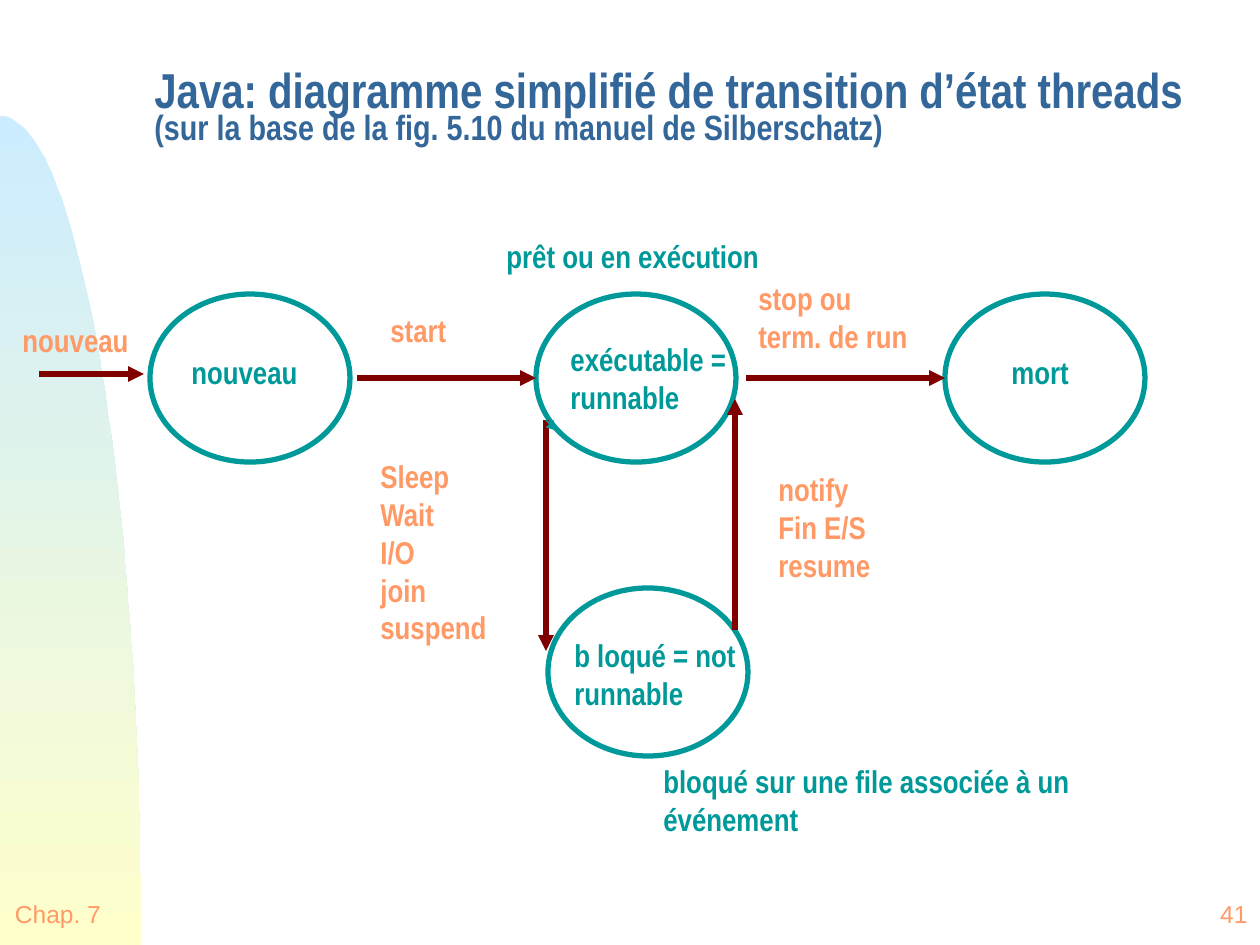
from dataclasses import dataclass

from lxml import etree
from pptx import Presentation
from pptx.dml.color import RGBColor
from pptx.enum.shapes import MSO_CONNECTOR, MSO_SHAPE
from pptx.enum.text import MSO_ANCHOR, PP_ALIGN
from pptx.oxml.ns import qn
from pptx.util import Emu, Pt

PX = 914400 / 126
STRAIGHT = MSO_CONNECTOR.STRAIGHT
ELLIPSE = MSO_SHAPE.OVAL
TOP, MIDDLE = MSO_ANCHOR.TOP, MSO_ANCHOR.MIDDLE
LEFT, CENTER, RIGHT = PP_ALIGN.LEFT, PP_ALIGN.CENTER, PP_ALIGN.RIGHT


@dataclass(frozen=True)
class Theme:
    title: str = "336699"
    state: str = "009999"
    event: str = "FF9966"
    arrow: str = "800000"
    wave_top: str = "CCECFF"
    wave_bottom: str = "FFFFCC"
    body_font: str = "Arial Narrow"
    footer_font: str = "Arial"
    title_size: int = 28
    subtitle_size: int = 20
    label_size: int = 18
    footer_size: int = 14
    stroke: int = 3
    thin_stroke: int = 1


def emu(px):
    return Emu(round(px * PX))


def rgb(color):
    return RGBColor.from_string(color)


def bezier(controls, steps):
    """Points along a cubic curve, both ends included."""
    for step in range(steps + 1):
        t = step / steps
        weights = ((1 - t) ** 3, 3 * t * (1 - t) ** 2, 3 * t * t * (1 - t), t ** 3)
        yield tuple(sum(w * point[axis] for w, point in zip(weights, controls))
                    for axis in (0, 1))


class StateDiagram:
    """Draws the elements of one slide in one theme."""

    def __init__(self, slide, theme):
        self.shapes = slide.shapes
        self.theme = theme

    def set_font(self, font, name, size, color, bold):
        font.name, font.size, font.bold = name, Pt(size), bold
        font.color.rgb = rgb(color)

    def text_frame(self, box, anchor=TOP, wrap=True):
        frame = self.shapes.add_textbox(*map(emu, box)).text_frame
        frame.word_wrap = wrap
        frame.vertical_anchor = anchor
        return frame

    def wave(self, controls, base):
        """Gradient area between a curve and its base corner."""
        start, *curve = bezier(controls, 60)
        builder = self.shapes.build_freeform(*start, scale=PX)
        builder.add_line_segments([*curve, base], close=True)
        area = builder.convert_to_shape()
        area.shadow.inherit = False
        area.line.fill.background()
        area.fill.gradient()
        area.fill.gradient_angle = 270
        colors = (self.theme.wave_top, self.theme.wave_bottom)
        for stop, color in zip(area.fill.gradient_stops, colors):
            stop.color.rgb = rgb(color)

    def title(self, box, heading, subheading):
        theme = self.theme
        paragraph = self.text_frame(box, MIDDLE).paragraphs[0]
        paragraph.line_spacing = 0.7
        self.set_font(paragraph.font, theme.body_font, theme.title_size, theme.title, True)
        for text, size in ((heading, theme.title_size), (subheading, theme.subtitle_size)):
            if paragraph.runs:
                paragraph.add_line_break()
            run = paragraph.add_run()
            run.text = text
            self.set_font(run.font, theme.body_font, size, theme.title, True)

    def footer(self, box, text, align):
        theme = self.theme
        paragraph = self.text_frame(box, MIDDLE, wrap=False).paragraphs[0]
        paragraph.text = text
        paragraph.alignment = align
        self.set_font(paragraph.font, theme.footer_font, theme.footer_size, theme.event, False)

    def label(self, box, text, color):
        frame = self.text_frame(box)
        frame.text = text
        for paragraph in frame.paragraphs:
            paragraph.alignment = LEFT
            self.set_font(paragraph.font, self.theme.body_font, self.theme.label_size,
                          color, True)

    def state(self, left, top):
        ring = self.shapes.add_shape(ELLIPSE, *map(emu, (left, top, 200, 168)))
        ring.shadow.inherit = False
        ring.fill.background()
        ring.line.color.rgb = rgb(self.theme.state)
        ring.line.width = Pt(self.theme.stroke)

    def arrow(self, ends, color, width):
        connector = self.shapes.add_connector(STRAIGHT, *map(emu, ends))
        connector.line.color.rgb = rgb(color)
        connector.line.width = Pt(width)
        line = connector.line._get_or_add_ln()
        etree.SubElement(line, qn("a:tailEnd"), type="triangle")
        etree.SubElement(connector._element.spPr, qn("a:effectLst"))


STATES = [(150, 294), (548, 588), (536, 294), (945, 294)]

TRANSITIONS = [
    (39, 374, 144, 374),
    (357, 378, 536, 378),
    (746, 378, 945, 378),
    (546, 420, 546, 651),
    (735, 630, 735, 399),
]

EVENT_LABELS = [
    ((10, 315, 147, 50), "nouveau"),
    ((378, 305, 126, 50), "start"),
    ((746, 273, 179, 88), "stop ou term. de run"),
    ((368, 451, 210, 239), "Sleep\nWait\nI/O\njoin\nsuspend"),
    ((766, 464, 179, 164), "notify\nFin E/S\nresume"),
]

STATE_LABELS = [
    ((179, 347, 168, 50), "nouveau"),
    ((558, 334, 210, 88), "exécutable = runnable"),
    ((999, 347, 189, 50), "mort"),
    ((562, 630, 189, 145), "b loqué = not runnable"),
    ((651, 756, 441, 88), "bloqué sur une file associée à un événement"),
    ((494, 231, 399, 50), "prêt ou en exécution"),
]


def main():
    presentation = Presentation()
    presentation.slide_width, presentation.slide_height = emu(1260), emu(945)
    theme = Theme()
    diagram = StateDiagram(
        presentation.slides.add_slide(presentation.slide_layouts[6]), theme)

    diagram.wave([(0, 116), (78, 116), (141, 488), (141, 945)], base=(0, 945))
    diagram.footer((0, 882, 116, 63), "Chap. 7", CENTER)
    diagram.footer((1172, 882, 88, 63), "41", RIGHT)
    diagram.title((142, 45, 1086, 132),
                  "Java: diagramme simplifié de transition d’état threads",
                  "(sur la base de la fig. 5.10 du manuel de Silberschatz)")
    for corner in STATES:
        diagram.state(*corner)
    for ends in TRANSITIONS:
        diagram.arrow(ends, theme.arrow, theme.stroke)
    for labels, color in ((EVENT_LABELS, theme.event), (STATE_LABELS, theme.state)):
        for box, text in labels:
            diagram.label(box, text, color)
    diagram.arrow((546, 420, 557, 431), theme.state, theme.thin_stroke)

    presentation.save("out.pptx")


if __name__ == "__main__":
    main()
